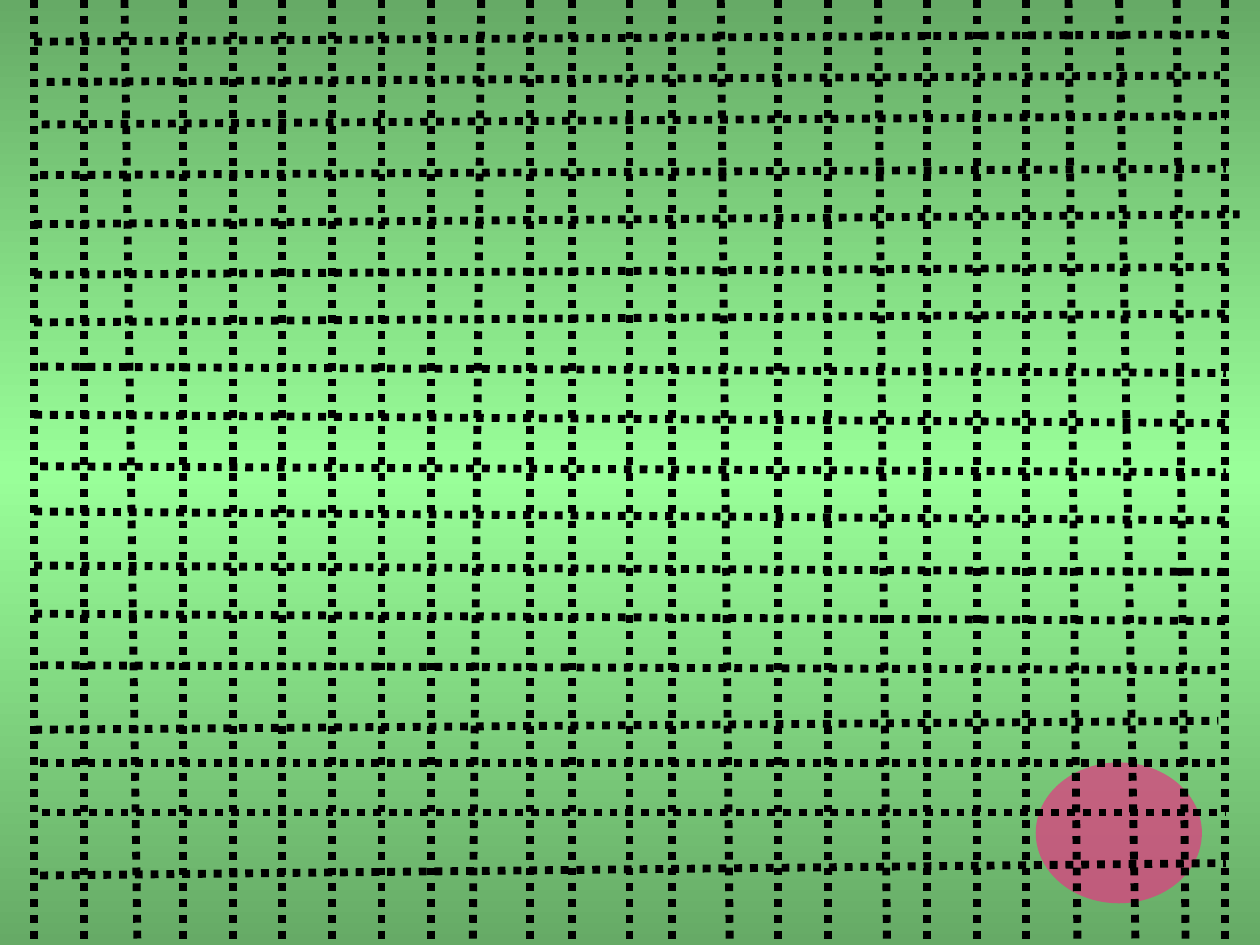
from copy import deepcopy

from lxml.etree import SubElement
from pptx import Presentation
from pptx.dml.color import RGBColor
from pptx.enum.dml import MSO_LINE
from pptx.enum.shapes import MSO_CONNECTOR, MSO_SHAPE
from pptx.oxml.ns import qn
from pptx.util import Cm, Pt

DARK_GREEN = RGBColor(0x66, 0xAA, 0x66)
LIGHT_GREEN = RGBColor(0x99, 0xFF, 0x99)
PINK = RGBColor(0xE0, 0x3C, 0x82)
BLACK = RGBColor(0, 0, 0)

SLIDE_WIDTH, SLIDE_HEIGHT = 25.4, 19.05
BACKGROUND_STOPS = [(0, DARK_GREEN), (0.5, LIGHT_GREEN), (1, DARK_GREEN)]
BALL = (20.88, 15.37, 3.35, 2.84)
BALL_OPACITY = 73

GRID_LEFT = 0.69
COLUMN_PITCH = 1.0
REGULAR_COLUMNS = [0, 1, 3, 4, 5, 6, 7, 8, 10, 12, 15, 16, 18, 19, 20, 24]
SHIFTED_COLUMNS = [11.53, 13.54]
SLANTED_COLUMNS = [
    (2.51, 2.77), (9.7, 9.53), (14.53, 14.71), (17.7, 17.88),
    (21.54, 21.72), (22.56, 22.89), (23.72, 23.9),
]
ROWS = [
    (0.69, 0.84, 24.71, 0.69),
    (0.94, 1.65, 24.59, 1.52),
    (0.84, 2.51, 24.71, 2.34),
    (0.81, 3.53, 24.71, 3.4),
    (0.69, 4.52, 24.99, 4.32),
    (0.69, 5.54, 24.82, 5.38),
    (0.69, 6.5, 24.74, 6.32),
    (0.81, 7.39, 24.71, 7.52),
    (0.69, 8.36, 24.71, 8.53),
    (0.81, 9.4, 24.71, 9.52),
    (0.69, 10.31, 24.74, 10.49),
    (0.69, 11.4, 24.71, 11.53),
    (0.69, 12.37, 24.71, 12.52),
    (0.81, 13.41, 24.59, 13.51),
    (0.69, 14.71, 24.56, 14.53),
    (0.81, 15.39, 24.59, 15.39),
    (0.84, 16.38, 24.71, 16.38),
    (0.81, 17.65, 24.71, 17.4),
]


def paint_background(slide):
    fill = slide.background.fill
    fill.gradient()
    fill.gradient_angle = 90
    stop_list = slide.element.find(".//" + qn("a:gsLst"))
    stop_list.append(deepcopy(stop_list[0]))
    for stop, (position, color) in zip(fill.gradient_stops, BACKGROUND_STOPS):
        stop.position = position
        stop.color.rgb = color


def add_ball(slide):
    ball = slide.shapes.add_shape(MSO_SHAPE.OVAL, *map(Cm, BALL))
    ball.shadow.inherit = False
    ball.fill.solid()
    ball.fill.fore_color.rgb = PINK
    ball.line.fill.background()
    color = ball.element.spPr.find(qn("a:solidFill"))[0]
    SubElement(color, qn("a:alpha"), val=str(BALL_OPACITY * 1000))


def add_dotted_line(slide, ends):
    connector = slide.shapes.add_connector(MSO_CONNECTOR.STRAIGHT, *map(Cm, ends))
    connector.line.color.rgb = BLACK
    connector.line.width = Pt(4.5)
    connector.line.dash_style = MSO_LINE.ROUND_DOT
    SubElement(connector.element.spPr, qn("a:effectLst"))


def main():
    presentation = Presentation()
    presentation.slide_width = Cm(SLIDE_WIDTH)
    presentation.slide_height = Cm(SLIDE_HEIGHT)
    slide = presentation.slides.add_slide(presentation.slide_layouts[6])
    paint_background(slide)
    add_ball(slide)

    straight = [GRID_LEFT + index * COLUMN_PITCH for index in REGULAR_COLUMNS]
    columns = [(x, x) for x in straight + SHIFTED_COLUMNS] + SLANTED_COLUMNS
    column_lines = [(top, 0, bottom, SLIDE_HEIGHT) for top, bottom in sorted(columns)]
    for ends in ROWS + column_lines:
        add_dotted_line(slide, ends)

    presentation.save("out.pptx")


if __name__ == "__main__":
    main()
